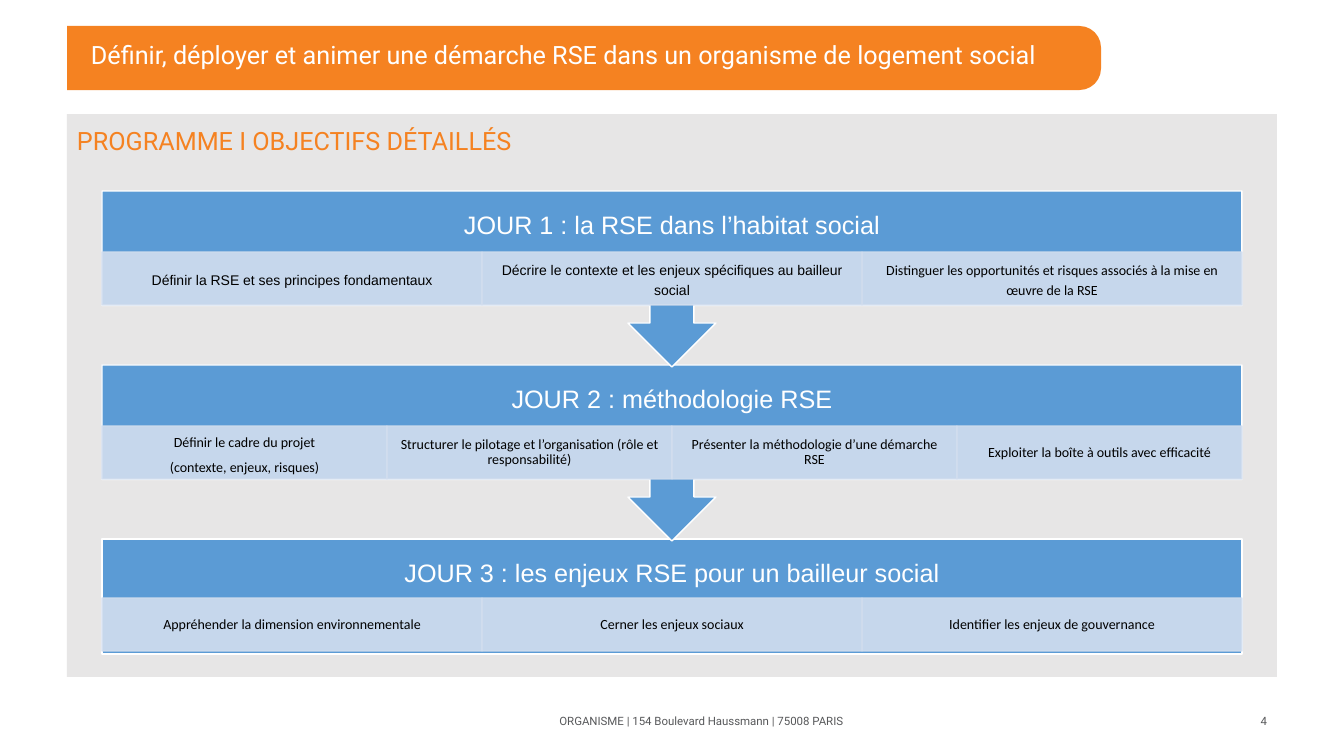
import pptx
import pptx.dml.color
import pptx.enum.shapes
import pptx.enum.text
import pptx.oxml.ns
import pptx.util
import lxml.etree

PX = 914400 / 100.8
COLORS = {"orange": "F58221", "panel": "E7E6E6", "white": "FFFFFF", "grey": "58595B",
          "blue": "5B9BD5", "pale": "D2DEEF", "black": "000000"}
SHAPES = pptx.enum.shapes.MSO_SHAPE
ALIGN = pptx.enum.text.PP_ALIGN
ANCHOR = pptx.enum.text.MSO_ANCHOR

presentation = pptx.Presentation()
presentation.slide_width = round(1344 * PX)
presentation.slide_height = round(756 * PX)
slide = presentation.slides.add_slide(presentation.slide_layouts[6])


def add_block(kind, box, fill, line=None, opacity=None):
    """Add a preset shape, or a text box when kind is None."""
    left, top, width, height = [round(length * PX) for length in box]
    if kind is None:
        return slide.shapes.add_textbox(left, top, width, height)
    block = slide.shapes.add_shape(kind, left, top, width, height)
    block.shadow.inherit = False
    block.fill.solid()
    block.fill.fore_color.rgb = pptx.dml.color.RGBColor.from_string(COLORS[fill])
    if line:
        block.line.color.rgb = pptx.dml.color.RGBColor.from_string(COLORS[line])
        block.line.width = pptx.util.Pt(1)
    else:
        block.line.fill.background()
    if opacity:
        for color in block._element.spPr.iter(pptx.oxml.ns.qn("a:srgbClr")):
            lxml.etree.SubElement(color, pptx.oxml.ns.qn("a:alpha"), val=str(opacity * 1000))
    return block


def write(block, text, size, font, color, align=ALIGN.LEFT, anchor=ANCHOR.MIDDLE,
          spacing=1.0, after=0, insets=(10, 5)):
    frame = block.text_frame
    frame.text = text
    frame.word_wrap = True
    frame.vertical_anchor = anchor
    frame.margin_left = frame.margin_right = round(insets[0] * PX)
    frame.margin_top = frame.margin_bottom = round(insets[1] * PX)
    for paragraph in frame.paragraphs:
        paragraph.alignment = align
        paragraph.line_spacing = spacing
        paragraph.space_after = pptx.util.Pt(after)
        for run in paragraph.runs:
            run.font.size = pptx.util.Pt(size)
            run.font.name = font
            run.font.color.rgb = pptx.dml.color.RGBColor.from_string(COLORS[color])


# Title banner, squared off on its left side
banner = add_block(SHAPES.ROUNDED_RECTANGLE, (9, 26, 1092, 64), "orange")
banner.adjustments[0] = 0.336
add_block(SHAPES.RECTANGLE, (0, 15, 67, 89), "white")
title = add_block(None, (81, 26, 998, 60), None)
write(title, "Définir, déployer et animer une démarche RSE dans un organisme de logement social",
      18, "Roboto", "white", spacing=0.9)

# Programme panel
panel = add_block(SHAPES.RECTANGLE, (67, 114, 1210, 563), "panel")
write(panel, "PROGRAMME I OBJECTIFS DÉTAILLÉS", 18, "Roboto", "orange",
      anchor=ANCHOR.TOP, spacing=1.2)

# Days: heading, then objectives as (text, font, line spacing)
days = [
    ("JOUR 1 : la RSE dans l’habitat social", [
        ("Définir la RSE et ses principes fondamentaux", "Arial", 1.2),
        ("Décrire le contexte et les enjeux spécifiques au bailleur social", "Arial", 1.2),
        ("Distinguer les opportunités et risques associés à la mise en œuvre de la RSE",
         "Calibri", 1.2)]),
    ("JOUR 2 : méthodologie RSE", [
        ("Définir le cadre du projet\n(contexte, enjeux, risques)", "Calibri", 1.2),
        ("Structurer le pilotage et l’organisation (rôle et responsabilité)", "Calibri", 0.9),
        ("Présenter la méthodologie d’une démarche RSE", "Calibri", 0.9),
        ("Exploiter la boîte à outils avec efficacité", "Calibri", 0.9)]),
    ("JOUR 3 : les enjeux RSE pour un bailleur social", [
        ("Appréhender la dimension environnementale", "Calibri", 0.9),
        ("Cerner les enjeux sociaux", "Calibri", 0.9),
        ("Identifier les enjeux de gouvernance", "Calibri", 0.9)]),
]
DAY_LEFT, DAY_TOP, DAY_WIDTH, DAY_STEP = 102, 191, 1140, 174

# Later days go behind, so that each arrow tip overlaps the next day
for index, (heading, objectives) in reversed(list(enumerate(days))):
    top = DAY_TOP + index * DAY_STEP
    is_last = index == len(days) - 1
    kind, height, offset = ((SHAPES.RECTANGLE, 115, 59) if is_last
                            else (SHAPES.DOWN_ARROW_CALLOUT, 176, 61))
    add_block(kind, (DAY_LEFT, top, DAY_WIDTH, height), "blue", "white")
    day_heading = add_block(None, (DAY_LEFT, top, DAY_WIDTH, 61), None)
    write(day_heading, heading, 18, "Arial", "white", ALIGN.CENTER,
          spacing=1.2, after=6.3, insets=(14, 14))
    width = DAY_WIDTH // len(objectives)
    for column, (text, font, spacing) in enumerate(objectives):
        objective = add_block(SHAPES.RECTANGLE,
                              (DAY_LEFT + column * width, top + offset, width, 53),
                              "pale", "pale", 90)
        write(objective, text, 10, font, "black", ALIGN.CENTER,
              spacing=spacing, after=3.5, insets=(8, 1))

# Footer and page number
footer = add_block(None, (446, 701, 511, 40), None)
write(footer, "ORGANISME | 154 Boulevard Haussmann | 75008 PARIS", 8.2, "Roboto", "grey",
      ALIGN.CENTER)
page_number = add_block(None, (975, 701, 302, 40), None)
write(page_number, "4", 8.2, "Roboto", "grey", ALIGN.RIGHT)

presentation.save("out.pptx")
